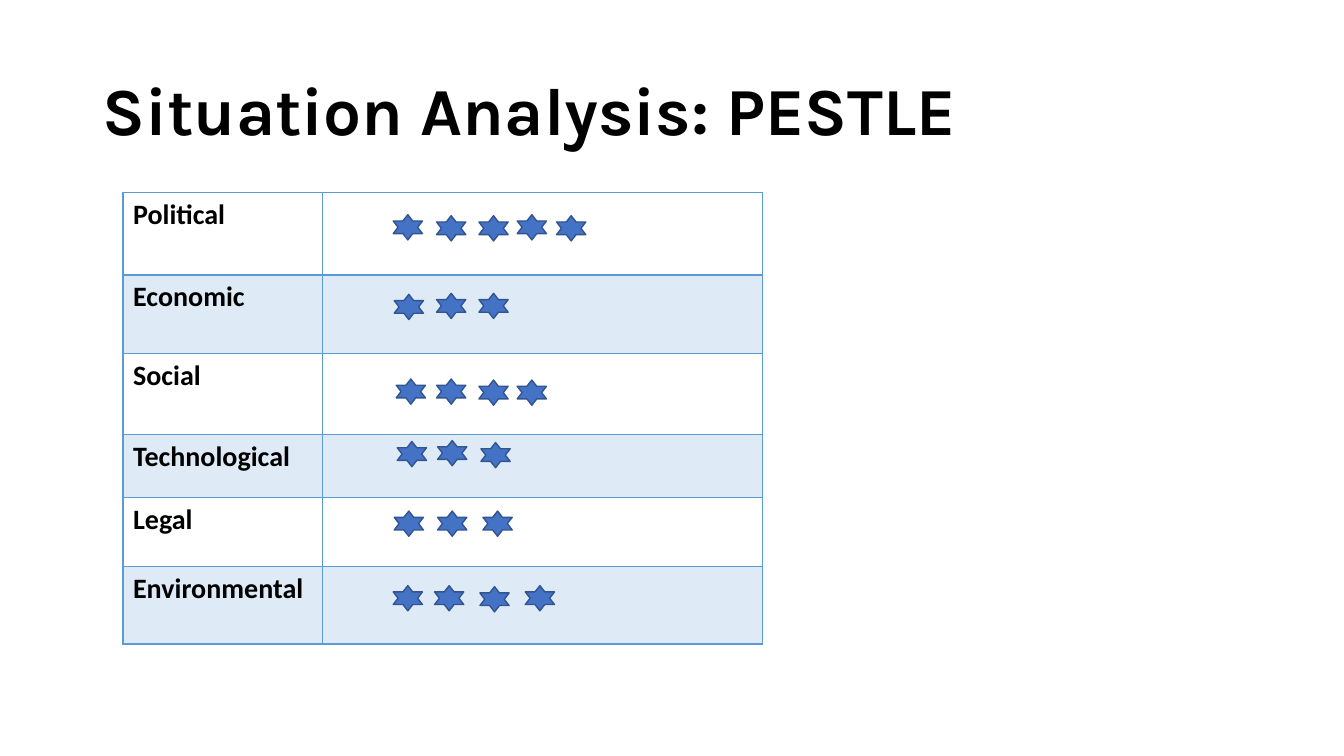
import pptx
import pptx.util
import pptx.dml.color
import pptx.enum.shapes
import pptx.enum.text
import pptx.oxml
import pptx.oxml.ns

HUES = {"ink": "000000", "edge": "5B9BD5", "star": "4472C4", "rim": "325491"}
SCALE = 9144
NS = pptx.oxml.ns.nsdecls("a")
COLS = [198, 436]
ROWS = [
    ("Political", 82, [(390, 213), (433, 214), (475, 214), (513, 213), (552, 214)]),
    ("Economic", 78, [(391, 292), (433, 291), (475, 291)]),
    ("Social", 80, [(393, 376), (433, 376), (475, 377), (513, 377)]),
    ("Technological", 63, [(394, 438), (434, 437), (477, 439)]),
    ("Legal", 68, [(391, 507), (434, 507), (479, 507)]),
    ("Environmental", 77, [(390, 581), (431, 581), (476, 582), (521, 581)]),
]


def px(num):
    return pptx.util.Emu(num * SCALE)


def hue(name):
    return pptx.dml.color.RGBColor.from_string(HUES[name])


def apply(item, looks):
    for key, value in looks.items():
        setattr(item, key, value)


def write(frame, text, face, size):
    para = frame.paragraphs[0]
    run = para.add_run()
    run.text = text
    apply(run.font, {"name": face, "size": pptx.util.Pt(size), "bold": True})
    run.font.color.rgb = hue("ink")
    return para


def add_title(slide, text):
    box = slide.shapes.add_textbox(px(92), px(40), px(1150), px(145))
    anchor = pptx.enum.text.MSO_ANCHOR.MIDDLE
    apply(box.text_frame, {"word_wrap": True, "vertical_anchor": anchor})
    write(box.text_frame, text, "Karla", 48).line_spacing = 0.9


def add_edge(cell, side, width):
    cell._tc.get_or_add_tcPr().append(pptx.oxml.parse_xml(
        f'<a:ln{side} {NS} w="{pptx.util.Pt(width)}"><a:solidFill>'
        f'<a:srgbClr val="{HUES["edge"]}"/></a:solidFill></a:ln{side}>'))


def tint(cell):
    cell.fill.solid()
    cell.fill.fore_color.rgb = hue("edge")
    color = cell._tc.tcPr.find(".//" + pptx.oxml.ns.qn("a:solidFill") + "[last()]")
    color = cell._tc.tcPr.findall(pptx.oxml.ns.qn("a:solidFill"))[0][0]
    color.append(pptx.oxml.parse_xml(f'<a:alpha {NS} val="20000"/>'))


def style(cell, row):
    for side in "LRTB":
        add_edge(cell, side, 2 if row == 0 and side == "B" else 1)
    if row % 2:
        tint(cell)
    else:
        cell.fill.background()


def add_grid(slide):
    high = sum(row[1] for row in ROWS)
    frame = slide.shapes.add_table(
        len(ROWS), len(COLS), px(122), px(191), px(sum(COLS)), px(high))
    table = frame.table
    apply(table, {"first_row": False, "horz_banding": False})
    for col, wide in zip(table.columns, COLS):
        col.width = px(wide)
    for i, (label, tall, _) in enumerate(ROWS):
        table.rows[i].height = px(tall)
        for cell in table.rows[i].cells:
            style(cell, i)
        write(table.cell(i, 0).text_frame, label, "Calibri", 20)


def add_star(slide, left, top):
    kind = pptx.enum.shapes.MSO_SHAPE.STAR_6_POINT
    star = slide.shapes.add_shape(kind, px(left), px(top), px(29), px(25))
    star.shadow.inherit = False
    star.fill.solid()
    star.fill.fore_color.rgb = hue("star")
    star.line.color.rgb = hue("rim")
    star.line.width = pptx.util.Pt(1)


def main():
    deck = pptx.Presentation()
    apply(deck, {"slide_width": px(1333), "slide_height": px(750)})
    slide = deck.slides.add_slide(deck.slide_layouts[6])
    add_title(slide, "Situation Analysis: PESTLE")
    add_grid(slide)
    for _, _, spots in ROWS:
        for left, top in spots:
            add_star(slide, left, top)
    deck.save("out.pptx")


if __name__ == "__main__":
    main()
